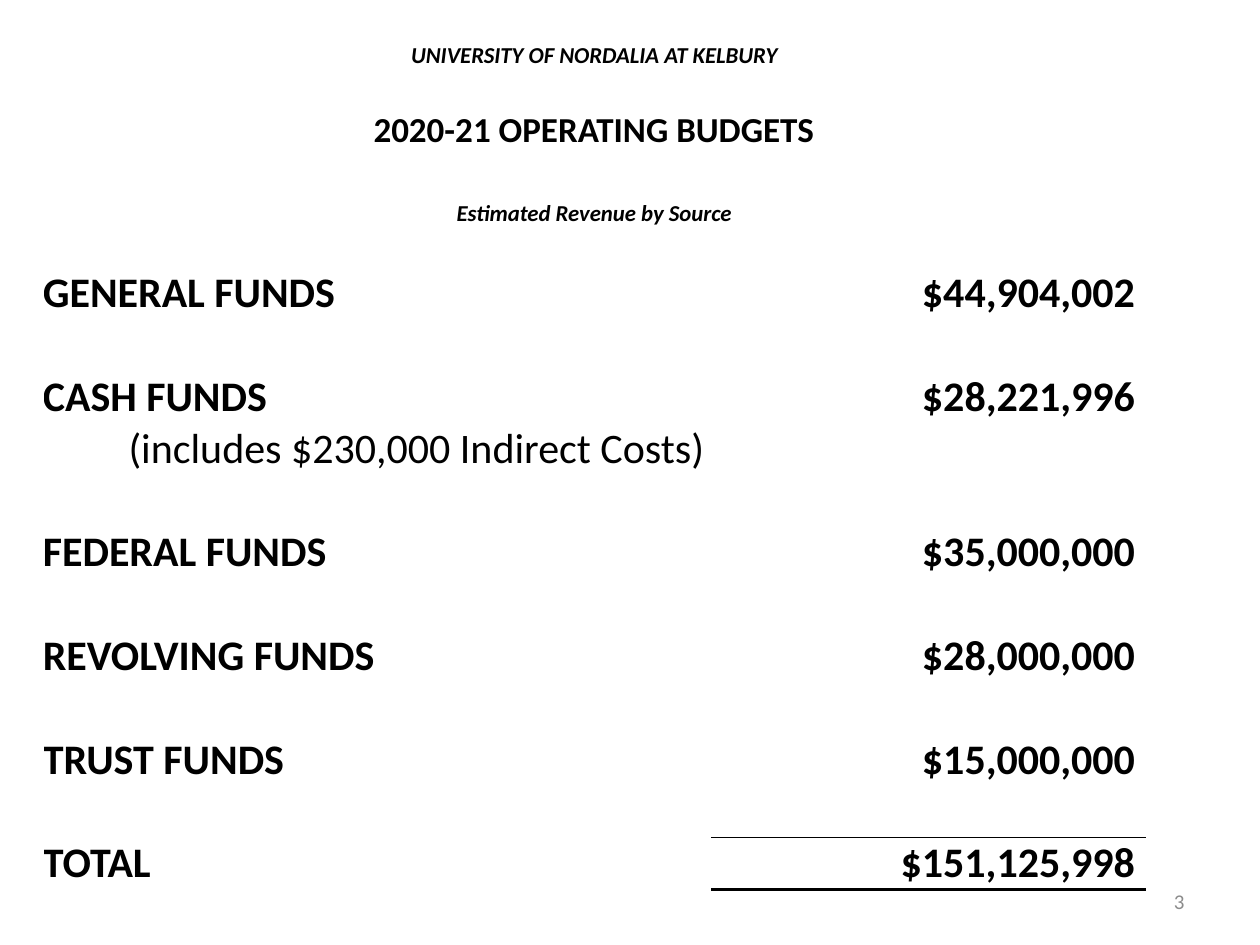
from lxml import etree
from pptx import Presentation
from pptx.dml.color import RGBColor
from pptx.enum import text
from pptx.oxml import ns
from pptx.util import Inches, Pt

COLORS = {"ink": "000000", "paper": "FFFFFF", "number": "8C8C8C"}
FONT = "Calibri"


def write(p, content, size, align, color="ink", bold=True, italic=False):
    p.text = content
    p.alignment = align
    p.font.name = FONT
    p.font.size = Pt(size)
    p.font.bold = bold
    p.font.italic = italic
    p.font.color.rgb = RGBColor.from_string(COLORS[color])


def add_border(cell, side, width):
    """Draw one cell edge; side is T or B, and B must be added before T."""
    ln = etree.Element(ns.qn(f"a:ln{side}"), w=str(Pt(width)))
    fill = etree.SubElement(ln, ns.qn("a:solidFill"))
    etree.SubElement(fill, ns.qn("a:srgbClr"), val=COLORS["ink"])
    cell._tc.get_or_add_tcPr().insert(0, ln)


prs = Presentation()
prs.slide_width, prs.slide_height = Inches(10), Inches(7.5)
s = prs.slides.add_slide(prs.slide_layouts[6])

# Slide number
sp = s.shapes.add_textbox(Inches(7.17), Inches(6.95), Inches(2.33), Inches(0.4))
tf = sp.text_frame
tf.word_wrap = True
tf.vertical_anchor = text.MSO_ANCHOR.MIDDLE
write(tf.paragraphs[0], "3", 12, text.PP_ALIGN.RIGHT, "number", bold=False)

# Budget table: six heading rows, twelve fund rows, one closing row
col_widths = [4.82, 0.49, 1.6, 1.84]
row_heights = [0.3, 0.32, 0.34, 0.3, 0.3, 0.31] + [4.94 / 12] * 12 + [0.19]
titles = {
    0: ("UNIVERSITY OF NORDALIA AT KELBURY", 13, True),
    2: ("2020-21 OPERATING BUDGETS", 20, False),
    4: ("Estimated Revenue by Source", 13, True),
}
funds = {
    6: ("GENERAL FUNDS", "$44,904,002"),
    8: ("CASH FUNDS", "$28,221,996"),
    11: ("FEDERAL FUNDS", "$35,000,000"),
    13: ("REVOLVING FUNDS", "$28,000,000"),
    15: ("TRUST FUNDS", "$15,000,000"),
    17: ("TOTAL", "$151,125,998"),
}
note_row, total_row = 9, 17

table = s.shapes.add_table(
    len(row_heights), len(col_widths), Inches(0.34), Inches(0.25),
    Inches(sum(col_widths)), Inches(sum(row_heights))).table
table.first_row = table.horz_banding = False
for col, width in zip(table.columns, col_widths):
    col.width = Inches(width)
for row, height in zip(table.rows, row_heights):
    row.height = Inches(height)

for cell in table.iter_cells():
    cell.margin_left = cell.margin_right = 0
    cell.margin_top = cell.margin_bottom = 0
    cell.vertical_anchor = text.MSO_ANCHOR.BOTTOM
    cell.fill.solid()
    cell.fill.fore_color.rgb = RGBColor.from_string(COLORS["paper"])
    cell.text_frame.paragraphs[0].font.size = Pt(12)

# Titles span the table; fund rows split into a label half and an amount half
merges = {1: [(1, 3)], 3: [(0, 2)]}
for r in range(len(row_heights)):
    spans = [(0, 3)] if r in titles else merges.get(r, [(0, 1), (2, 3)])
    for first, last in spans:
        table.cell(r, first).merge(table.cell(r, last))

for r, (title, size, italic) in titles.items():
    p = table.cell(r, 0).text_frame.paragraphs[0]
    write(p, title, size, text.PP_ALIGN.CENTER, italic=italic)

for r, (label, amount) in funds.items():
    write(table.cell(r, 0).text_frame.paragraphs[0], label, 24, text.PP_ALIGN.LEFT)
    cell = table.cell(r, 2)
    cell.margin_right = Inches(0.08)
    write(cell.text_frame.paragraphs[0], amount, 24, text.PP_ALIGN.RIGHT)

p = table.cell(note_row, 0).text_frame.paragraphs[0]
write(p, "(includes $230,000 Indirect Costs)", 24, text.PP_ALIGN.LEFT, bold=False)
p._p.get_or_add_pPr().set("marL", str(Inches(0.68)))

# Thin rule above the total, heavy rule below it
for c in (2, 3):
    add_border(table.cell(total_row - 1, c), "B", 0.5)
    add_border(table.cell(total_row, c), "B", 2)
    add_border(table.cell(total_row, c), "T", 0.5)
    add_border(table.cell(total_row + 1, c), "T", 2)

prs.save("out.pptx")
